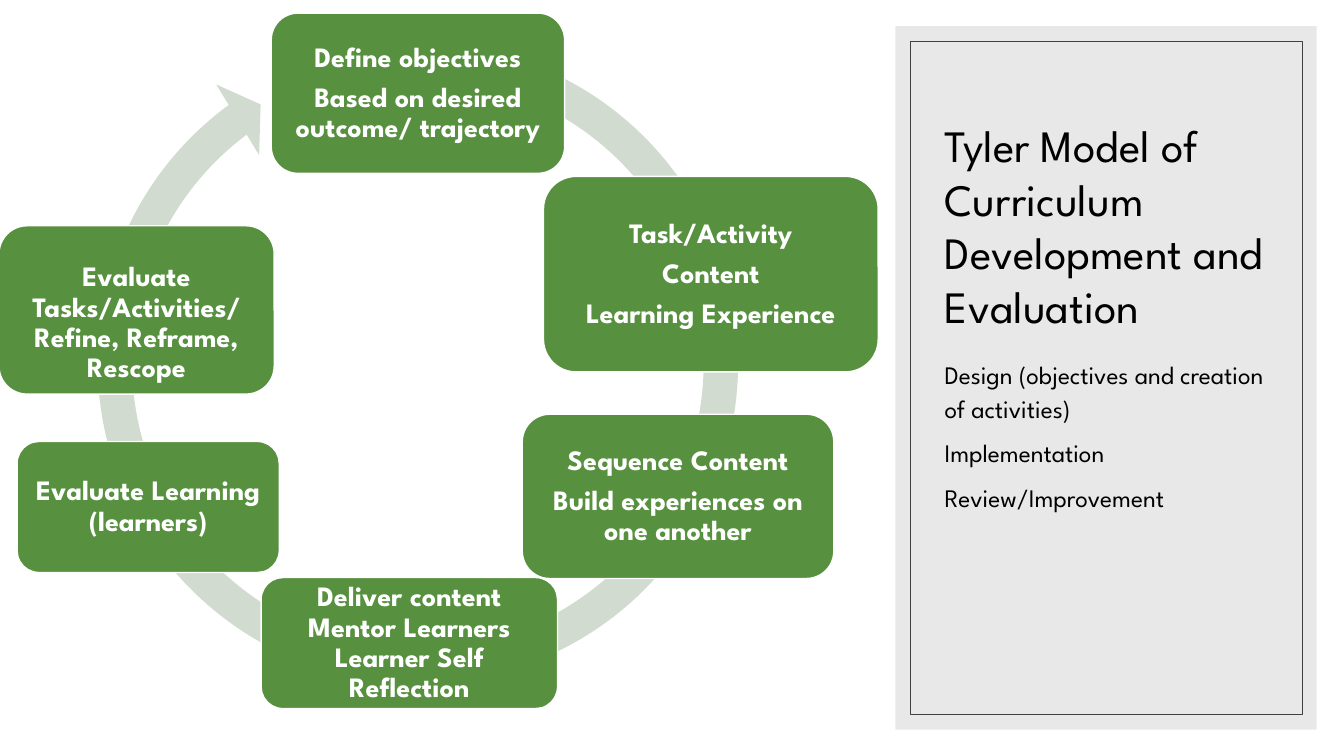
from lxml import etree
from pptx import Presentation
from pptx import util as u
from pptx.dml.color import RGBColor
from pptx.enum import shapes, text
from pptx.oxml.ns import qn

# Content
TITLE = "Tyler Model of Curriculum Development and Evaluation"
PHASES = ["Design (objectives and creation of activities)", "Implementation", "Review/Improvement"]
FONT = "League Spartan"
GREEN, PALE, GREY, DARK, WHITE, BLACK = "57903F", "D1DBCF", "D9D9D9", "404040", "FFFFFF", "000000"
# Cycle steps, clockwise: left, top, width, height, side inset, top inset, paragraphs
STEPS = [
    (2.69, 0.13, 2.91, 1.59, 0.08, 0.08, ["Define objectives", "Based on desired outcome/ trajectory"]),
    (5.39, 1.75, 3.32, 1.94, 0.08, 0.08, ["Task/Activity", "Content", "Learning Experience"]),
    (5.18, 4.11, 3.09, 1.63, 0.08, 0.08, ["Sequence Content", "Build experiences on one another"]),
    (2.59, 5.73, 2.94, 1.30, 0.08, 0.08, ["Deliver content Mentor Learners Learner Self Reflection"]),
    (0.17, 4.38, 2.60, 1.30, 0.08, 0.08, ["Evaluate Learning (learners)"]),
    (-0.01, 2.24, 2.73, 1.67, 0.05, 0.31, ["Evaluate Tasks/Activities/ Refine, Reframe, Rescope"]),
]
ARROW_ADJUSTMENTS = [0.05, 3.13, 140.11, 172.56, 0.06]


def rgb(hex_color):
    return RGBColor.from_string(hex_color)


def box(*at):
    return [u.Inches(v) for v in at]


def add_shape(s, kind, at, fill=None, line=None, line_width=1):
    sp = s.shapes.add_shape(kind, *box(*at))
    sp.shadow.inherit = False
    if fill:
        sp.fill.solid()
        sp.fill.fore_color.rgb = rgb(fill)
    else:
        sp.fill.background()
    if line:
        sp.line.color.rgb = rgb(line)
        sp.line.width = u.Pt(line_width)
    else:
        sp.line.fill.background()
    return sp


def write(tf, paragraphs, size, color=BLACK, bold=False, align=text.PP_ALIGN.LEFT,
          anchor=text.MSO_ANCHOR.TOP, spacing=1.0, before=0, after=0):
    tf.word_wrap = True
    tf.auto_size = text.MSO_AUTO_SIZE.NONE
    tf.vertical_anchor = anchor
    for i, words in enumerate(paragraphs):
        p = tf.paragraphs[0] if i == 0 else tf.add_paragraph()
        p.alignment = align
        p.line_spacing = spacing
        p.space_before, p.space_after = u.Pt(before), u.Pt(after)
        r = p.add_run()
        r.text = words
        r.font.name, r.font.size, r.font.bold = FONT, u.Pt(size), bold
        r.font.color.rgb = rgb(color)


prs = Presentation()
prs.slide_width, prs.slide_height = box(13.33, 7.5)
s = prs.slides.add_slide(prs.slide_layouts[5])

# Side panel: translucent grey with a thin inner frame
panel = add_shape(s, shapes.MSO_SHAPE.RECTANGLE, (8.88, 0.26, 4.18, 6.98), fill=GREY)
panel_color = panel.fill._xPr.find(qn("a:solidFill"))[0]
etree.SubElement(panel_color, qn("a:alpha"), val="60000")
add_shape(s, shapes.MSO_SHAPE.RECTANGLE, (9.03, 0.41, 3.89, 6.68), line=DARK, line_width=0.5)

# Title, raised above the panel, and the phases below it
title = s.shapes.title
title.left, title.top, title.width, title.height = box(9.27, 0.66, 3.44, 2.69)
write(title.text_frame, [TITLE], 32, anchor=text.MSO_ANCHOR.BOTTOM)
title.element.getparent().append(title.element)
phases = s.shapes.add_textbox(*box(9.27, 3.49, 3.44, 2.96))
write(phases.text_frame, PHASES, 18, spacing=1.1, before=8)

# Circular arrow behind the steps
arrow = add_shape(s, shapes.MSO_SHAPE.CIRCULAR_ARROW, (0.73, 0.19, 6.83, 6.83), fill=PALE)
for i, value in enumerate(ARROW_ADJUSTMENTS):
    arrow.adjustments[i] = value

# Cycle steps
for left, top, width, height, side, inset_top, paragraphs in STEPS:
    step = add_shape(s, shapes.MSO_SHAPE.ROUNDED_RECTANGLE, (left, top, width, height), GREEN, WHITE)
    tf = step.text_frame
    tf.margin_left = tf.margin_right = tf.margin_bottom = u.Inches(side)
    tf.margin_top = u.Inches(inset_top)
    write(tf, paragraphs, 20, WHITE, bold=True, align=text.PP_ALIGN.CENTER,
          anchor=text.MSO_ANCHOR.MIDDLE, spacing=0.9, after=7)

prs.save("out.pptx")
